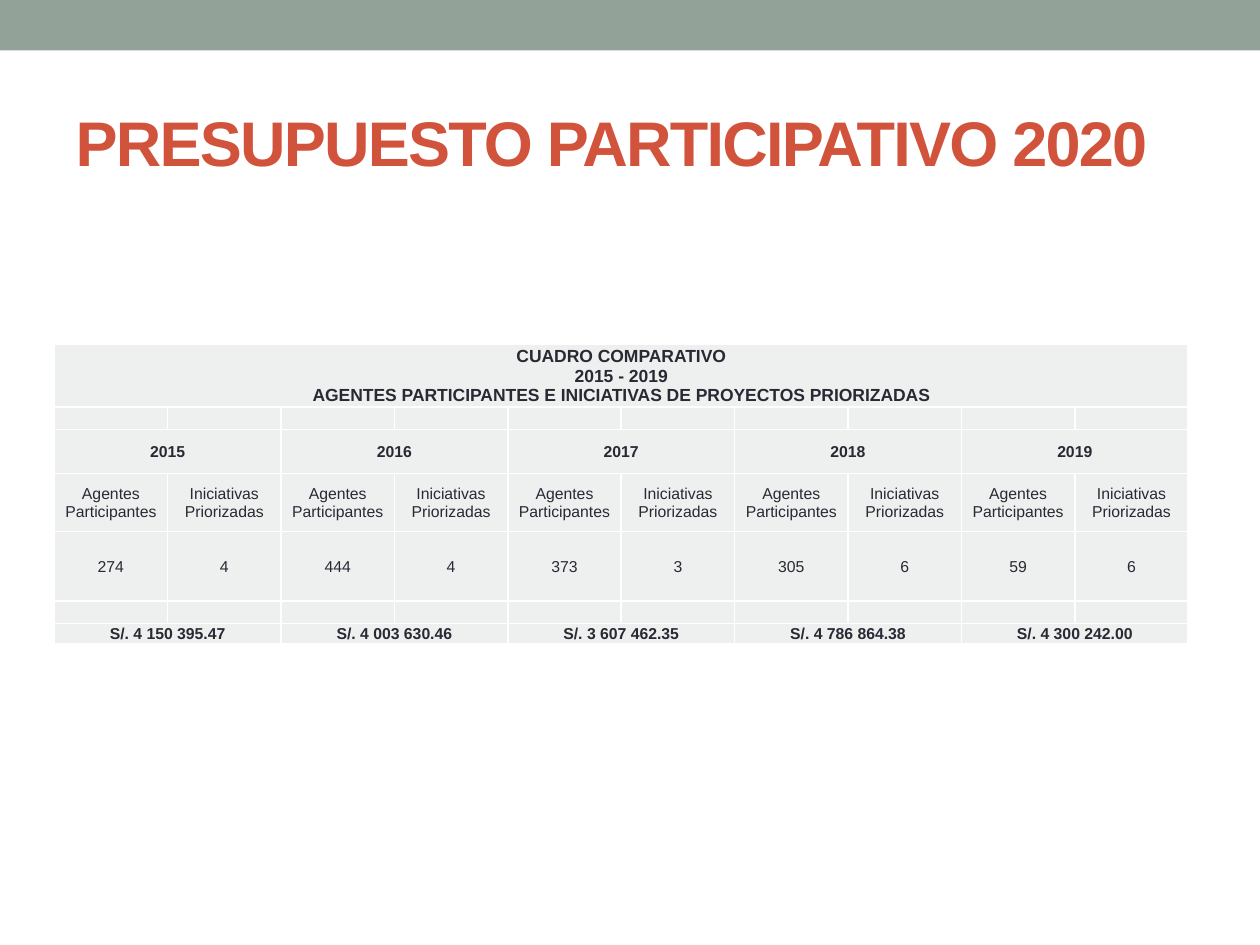
from copy import deepcopy

from lxml.etree import SubElement
from pptx import Presentation
from pptx.dml.color import RGBColor
from pptx.enum.shapes import MSO_SHAPE
from pptx.enum.text import MSO_ANCHOR, PP_ALIGN
from pptx.oxml.ns import qn
from pptx.util import Inches, Pt

SAGE = RGBColor(0x93, 0xA2, 0x99)
BRICK = RGBColor(0xD2, 0x53, 0x3C)
INK = RGBColor(0x29, 0x29, 0x34)
MIST = RGBColor(0xEE, 0xF0, 0xEF)

HEADING = "CUADRO COMPARATIVO\n2015 - 2019\nAGENTES PARTICIPANTES E INICIATIVAS DE PROYECTOS PRIORIZADAS"
RESULTS = [
    ("2015", "274", "4", "S/. 4 150 395.47"),
    ("2016", "444", "4", "S/. 4 003 630.46"),
    ("2017", "373", "3", "S/. 3 607 462.35"),
    ("2018", "305", "6", "S/. 4 786 864.38"),
    ("2019", "59", "6", "S/. 4 300 242.00"),
]
ROW_HEIGHTS = [0.5, 0.18, 0.35, 0.46, 0.55, 0.18, 0.16]
COLUMN_WIDTH = 0.9


def write(frame, text, size=9, bold=False, color=INK, align=PP_ALIGN.CENTER, spacing=None):
    para = frame.paragraphs[0]
    para.text = text
    para.alignment = align
    for span in para.runs:
        span.font.name = "Arial"
        span.font.size = Pt(size)
        span.font.bold = bold
        span.font.color.rgb = color
        if spacing is not None:
            span.font._element.set("spc", str(spacing))
    for line_break in para._p.findall(qn("a:br")):
        line_break.insert(0, deepcopy(para.runs[0].font._element))
    if not text:
        SubElement(para._p, qn("a:endParaRPr"), sz=str(size * 100))


class SlideBuilder:
    """Draw styled elements on the current slide."""

    def __init__(self, deck):
        self.slide = deck.slides.add_slide(deck.slide_layouts[5])

    def band(self, left, top, width, height):
        shape = self.slide.shapes.add_shape(
            MSO_SHAPE.RECTANGLE, Inches(left), Inches(top), Inches(width), Inches(height))
        shape.shadow.inherit = False
        shape.fill.solid()
        shape.fill.fore_color.rgb = SAGE
        shape.line.fill.background()

    def title(self, text, left, top, width, height):
        box = self.slide.shapes.title
        box.left, box.top = Inches(left), Inches(top)
        box.width, box.height = Inches(width), Inches(height)
        box.text_frame.vertical_anchor = MSO_ANCHOR.MIDDLE
        write(box.text_frame, text, size=36, bold=True, color=BRICK,
              align=PP_ALIGN.LEFT, spacing=-100)

    def table(self, left, top, columns):
        frame = self.slide.shapes.add_table(
            len(ROW_HEIGHTS), columns, Inches(left), Inches(top),
            Inches(columns * COLUMN_WIDTH), Inches(sum(ROW_HEIGHTS)))
        table = frame.table
        table.first_row = table.horz_banding = False
        for column in table.columns:
            column.width = Inches(COLUMN_WIDTH)
        for row, height in zip(table.rows, ROW_HEIGHTS):
            row.height = Inches(height)
            for cell in row.cells:
                self.cell(cell)
        return table

    def cell(self, cell):
        cell.margin_left = cell.margin_right = cell.margin_top = Inches(0.01)
        cell.margin_bottom = 0
        cell.vertical_anchor = MSO_ANCHOR.MIDDLE
        properties = cell._tc.get_or_add_tcPr()
        for side in ("a:lnL", "a:lnR", "a:lnT", "a:lnB"):
            line = SubElement(properties, qn(side), w=str(Pt(1)))
            SubElement(SubElement(line, qn("a:solidFill")), qn("a:srgbClr"), val="FFFFFF")
        cell.fill.solid()
        cell.fill.fore_color.rgb = MIST

    def fill_table(self, table):
        last = len(table.columns) - 1
        texts = {(0, 0): HEADING}
        table.cell(0, 0).merge(table.cell(0, last))
        for index, (year, agents, initiatives, amount) in enumerate(RESULTS):
            first, second = 2 * index, 2 * index + 1
            for row, text in ((2, year), (6, amount)):
                table.cell(row, first).merge(table.cell(row, second))
                texts[row, first] = text
            texts[3, first], texts[3, second] = "Agentes Participantes", "Iniciativas Priorizadas"
            texts[4, first], texts[4, second] = agents, initiatives
        for row in range(len(table.rows)):
            for column in range(last + 1):
                write(table.cell(row, column).text_frame, texts.get((row, column), ""),
                      size=10 if row == 0 else 9, bold=row in (0, 2, 6))


def main():
    deck = Presentation()
    deck.slide_width, deck.slide_height = Inches(10), Inches(7.5)
    page = SlideBuilder(deck)
    page.band(0, 0, 10, 0.4)
    page.title("PRESUPUESTO PARTICIPATIVO 2020", 0.5, 0.58, 9, 1.08)
    page.fill_table(page.table(0.43, 2.73, 2 * len(RESULTS)))
    deck.save("out.pptx")


if __name__ == "__main__":
    main()
